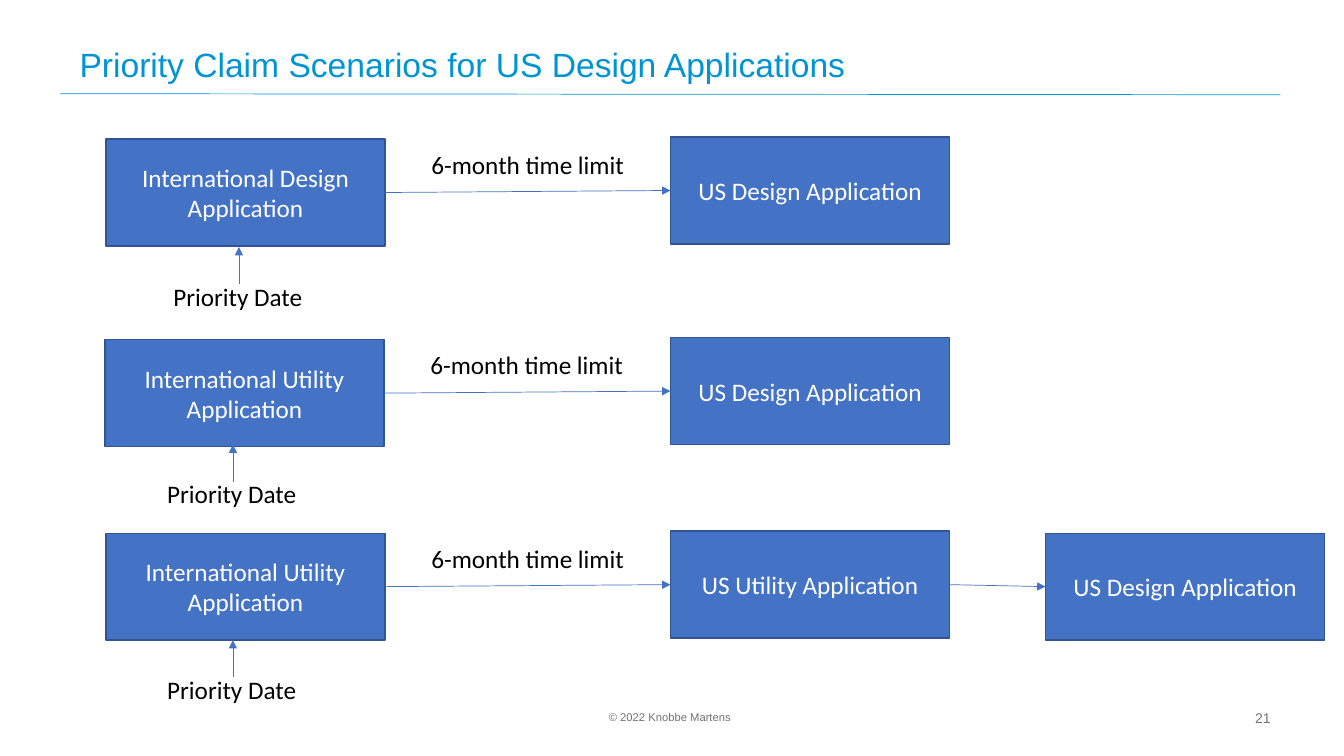
from lxml.etree import SubElement
from pptx import Presentation
from pptx.dml.color import RGBColor
from pptx.enum.shapes import MSO_CONNECTOR as Connector, MSO_SHAPE as Preset
from pptx.enum.text import MSO_ANCHOR as Anchor, PP_ALIGN as Align
from pptx.oxml.ns import qn
from pptx.util import Inches, Pt

BRAND_BLUE = RGBColor(0x00, 0x94, 0xD2)
BOX_BLUE = RGBColor(0x44, 0x72, 0xC4)
BOX_EDGE = RGBColor(0x32, 0x54, 0x91)
GRAY = RGBColor(0x76, 0x71, 0x71)
BLACK = RGBColor(0x00, 0x00, 0x00)
WHITE = RGBColor(0xFF, 0xFF, 0xFF)

BOX_WIDTH, BOX_HEIGHT = 2.77, 1.06
US_LEFT, FOLLOW_UP_LEFT = 6.65, 10.37
RISE = 0.02

TITLE = {"name": "Arial", "size": Pt(24), "color": BRAND_BLUE}
COPYRIGHT = {"name": "Arial", "size": Pt(8), "color": GRAY}
PAGE_NUMBER = {"name": "Arial", "size": Pt(10), "color": GRAY}
BOX_TEXT = {"name": "Calibri", "size": Pt(18), "color": WHITE}
LABEL = {"name": "Calibri", "size": Pt(18), "color": BLACK}

SCENARIOS = [
    (1.05, 1.38, "International Design Application", "US Design Application", 2.37, 2.45),
    (1.04, 3.37, "International Utility Application", "US Design Application", 2.31, 4.41),
    (1.05, 5.29, "International Utility Application", "US Utility Application", 2.31, 6.35),
]


def write_text(shape, text, style, align=Align.LEFT, anchor=Anchor.TOP, wrap=True, spacing=1.0):
    frame = shape.text_frame
    frame.word_wrap = wrap
    frame.vertical_anchor = anchor
    paragraph = frame.paragraphs[0]
    paragraph.alignment = align
    paragraph.line_spacing = spacing
    run = paragraph.add_run()
    run.text = text
    for name, value in style.items():
        if name == "color":
            run.font.color.rgb = value
        else:
            setattr(run.font, name, value)


def add_text(slide, bounds, text, style, **layout):
    box = slide.shapes.add_textbox(*map(Inches, bounds))
    write_text(box, text, style, **layout)


def add_box(slide, left, top, text):
    bounds = map(Inches, (left, top, BOX_WIDTH, BOX_HEIGHT))
    shape = slide.shapes.add_shape(Preset.RECTANGLE, *bounds)
    shape.shadow.inherit = False
    shape.fill.solid()
    shape.fill.fore_color.rgb = BOX_BLUE
    shape.line.color.rgb = BOX_EDGE
    shape.line.width = Pt(1)
    write_text(shape, text, BOX_TEXT, align=Align.CENTER, anchor=Anchor.MIDDLE)


def add_line(slide, start, end, color):
    line = slide.shapes.add_connector(Connector.STRAIGHT, *map(Inches, (*start, *end)))
    line.line.color.rgb = color
    line.line.width = Pt(0.5)
    SubElement(line._element.spPr, qn("a:effectLst"))
    return line


def add_arrow(slide, start, end):
    arrow = add_line(slide, start, end, BOX_BLUE)
    SubElement(arrow.line._get_or_add_ln(), qn("a:tailEnd"), type="triangle")


def add_scenario(slide, left, top, foreign, domestic, date_x, date_y):
    middle = top + BOX_HEIGHT / 2
    add_box(slide, left, top, foreign)
    add_box(slide, US_LEFT, top - RISE, domestic)
    add_arrow(slide, (left + BOX_WIDTH, middle), (US_LEFT, middle - RISE))
    add_text(slide, (left + 3.13, top + 0.05, 2.12, 0.4), "6-month time limit", LABEL, wrap=False)
    add_arrow(slide, (date_x, date_y + 0.37), (date_x, date_y))
    add_text(slide, (date_x - 0.75, date_y + 0.29, 1.49, 0.4), "Priority Date", LABEL, wrap=False)


def add_follow_up(slide, top):
    middle = top + BOX_HEIGHT / 2
    add_box(slide, FOLLOW_UP_LEFT, top, "US Design Application")
    add_arrow(slide, (US_LEFT + BOX_WIDTH, middle - RISE), (FOLLOW_UP_LEFT, middle))


def add_frame(slide):
    add_line(slide, (0.6, 0.93), (12.7, 0.94), BRAND_BLUE)
    add_text(slide, (5.94, 7, 1.43, 0.24), "© 2022 Knobbe Martens", COPYRIGHT, wrap=False)
    add_text(slide, (0.69, 0.29, 12.09, 0.75), "Priority Claim Scenarios for US Design Applications",
             TITLE, anchor=Anchor.MIDDLE, spacing=0.9)
    add_text(slide, (9.42, 6.92, 3.28, 0.4), "21", PAGE_NUMBER,
             align=Align.RIGHT, anchor=Anchor.MIDDLE)


def main():
    presentation = Presentation()
    presentation.slide_width = Inches(13.33)
    presentation.slide_height = Inches(7.5)
    slide = presentation.slides.add_slide(presentation.slide_layouts[6])
    add_frame(slide)
    for scenario in SCENARIOS:
        add_scenario(slide, *scenario)
    add_follow_up(slide, SCENARIOS[-1][1])
    presentation.save("out.pptx")


if __name__ == "__main__":
    main()
